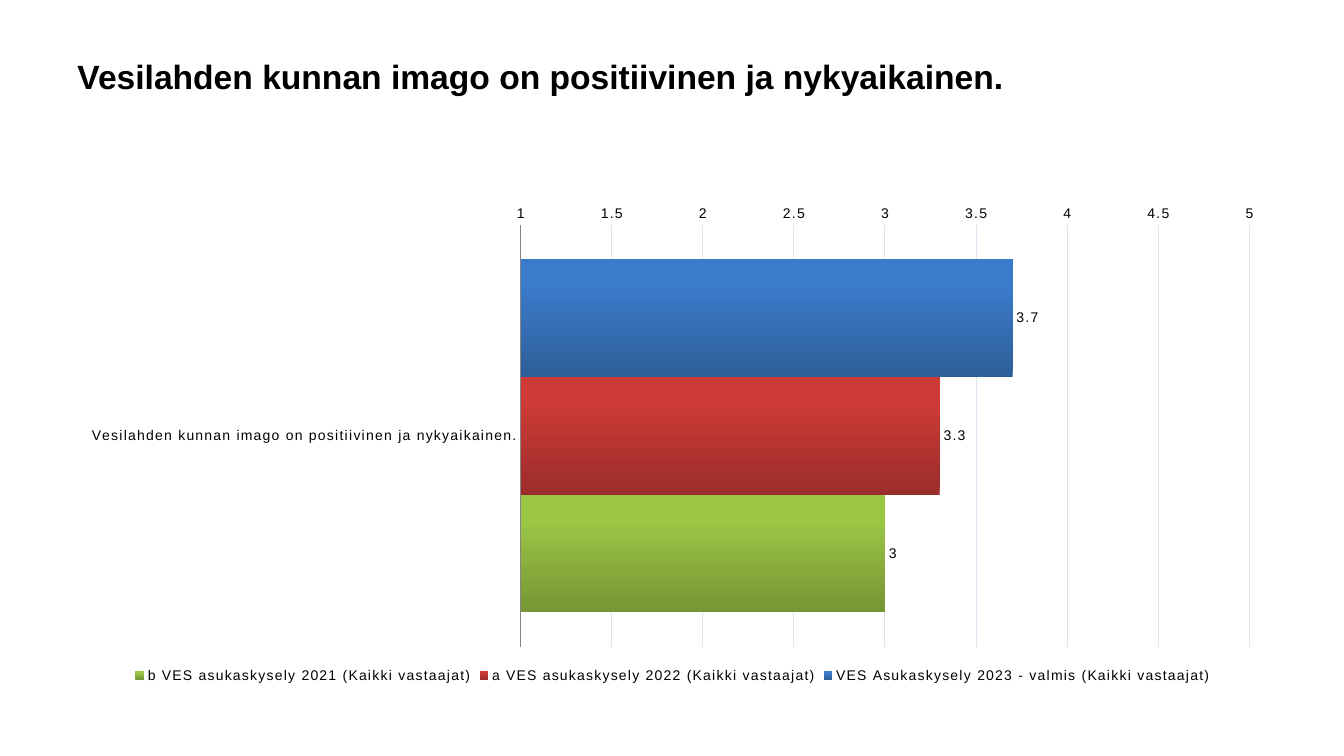
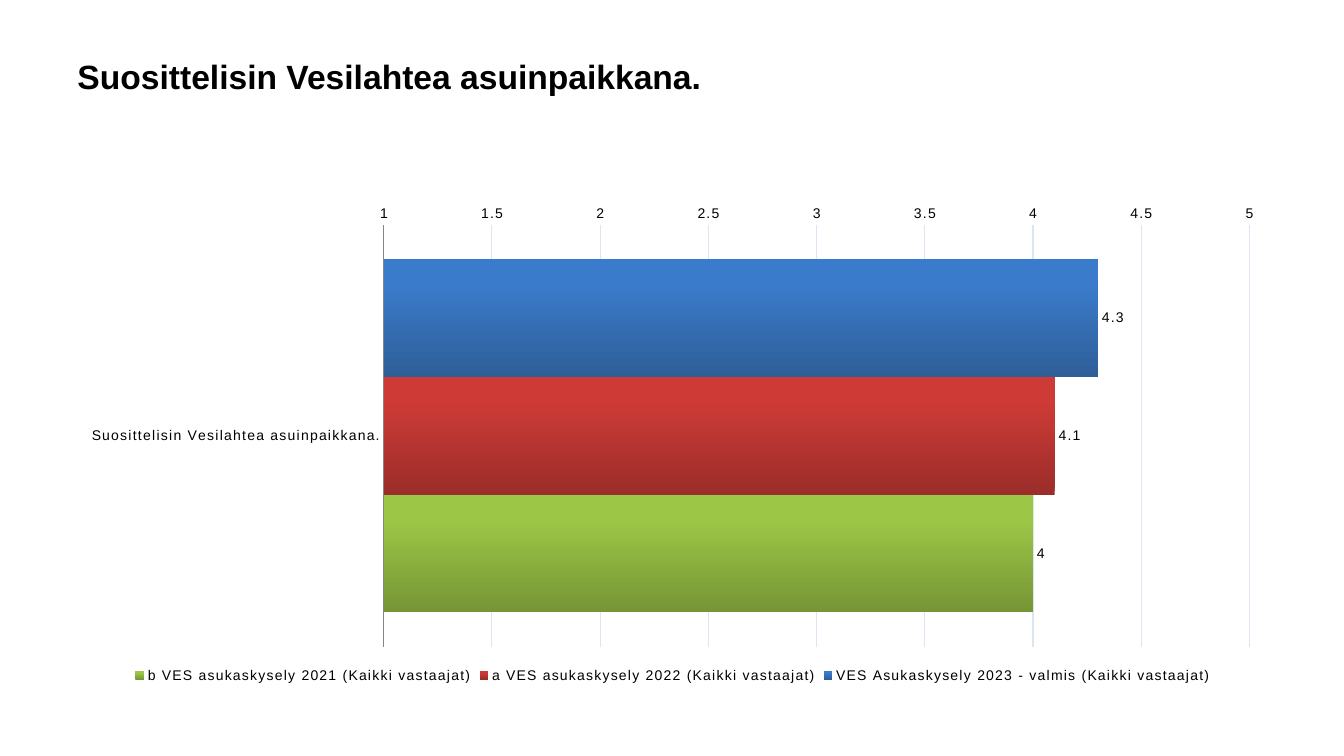
"""Build two survey slides, each with a title and a clustered bar chart."""
from dataclasses import dataclass

from pptx import Presentation
from pptx import util as u
from pptx.chart.data import CategoryChartData
from pptx.dml.color import RGBColor
from pptx.enum import chart as charts, text


@dataclass(frozen=True)
class Theme:
    """Colours, type and spacing shared by the slides."""
    font: str = "Arial"
    ink: str = "000000"
    axis: str = "868686"
    grid: str = "DCE6F2"
    title_size: int = 24
    chart_size: int = 10
    letter_spacing: int = 100
    left: float = 0.67
    width: float = 12


THEME = Theme()

SURVEYS = (
    ("VES Asukaskysely 2023 - valmis (Kaikki vastaajat)", "2E5F99", "3B7BCB"),
    ("a VES asukaskysely 2022 (Kaikki vastaajat)", "9B2D2A", "CE3B37"),
    ("b VES asukaskysely 2021 (Kaikki vastaajat)", "769535", "9CC746"),
)

QUESTIONS = (
    ("Vesilahden kunnan imago on positiivinen ja nykyaikainen.", (3.7, 3.3, 3)),
    ("Suosittelisin Vesilahtea asuinpaikkana.", (4.3, 4.1, 4)),
)


def rgb(value):
    """Return a colour object for a hex value."""
    return RGBColor.from_string(value)


def format_font(font, size, bold=False, color=THEME.ink):
    """Apply the theme typeface with the given size, weight and colour."""
    font.name = THEME.font
    font.size = u.Pt(size)
    font.bold = bold
    font.color.rgb = rgb(color)


def add_text(slide, content, left, top, width, height, size, bold=False,
             anchor=text.MSO_ANCHOR.MIDDLE):
    """Add a wrapped text box with one formatted paragraph."""
    shape = slide.shapes.add_textbox(*map(u.Inches, (left, top, width, height)))
    frame = shape.text_frame
    frame.word_wrap = True
    frame.vertical_anchor = anchor
    run = frame.paragraphs[0].add_run()
    run.text = content
    format_font(run.font, size, bold=bold)


def fill_gradient(fill, bottom, top):
    """Fill with a vertical gradient that is darkest at the bottom."""
    fill.gradient()
    fill.gradient_angle = 90
    for stop, color, position in zip(fill.gradient_stops, (bottom, top), (0, 0.8)):
        stop.color.rgb = rgb(color)
        stop.position = position


def style_axes(chart):
    """Set the scale, lines and order of both axes."""
    category = chart.category_axis
    category.reverse_order = True
    category.crosses = charts.XL_AXIS_CROSSES.MAXIMUM
    category.format.line.color.rgb = rgb(THEME.axis)
    category.format.line.width = u.Pt(0.75)
    value = chart.value_axis
    value.minimum_scale, value.maximum_scale = 1, 5
    value.major_unit = 0.5
    value.format.line.fill.background()
    value.has_major_gridlines = True
    grid = value.major_gridlines.format.line
    grid.color.rgb = rgb(THEME.grid)
    grid.width = u.Pt(0.75)
    value.tick_labels.number_format = "General"
    value.tick_labels.number_format_is_linked = False
    for axis in (category, value):
        axis.major_tick_mark = axis.minor_tick_mark = charts.XL_TICK_MARK.NONE
        format_font(axis.tick_labels.font, THEME.chart_size)


def style_plot(plot):
    """Set bar spacing, bar fills and value labels."""
    plot.gap_width = 58
    plot.overlap = 0
    plot.vary_by_categories = False
    for series, (_, bottom, top) in zip(plot.series, SURVEYS):
        fill_gradient(series.format.fill, bottom, top)
        labels = series.data_labels
        labels.show_value = True
        labels.position = charts.XL_LABEL_POSITION.OUTSIDE_END
        format_font(labels.font, THEME.chart_size)


def style_legend(chart):
    """Place the legend below the plot."""
    chart.has_legend = True
    legend = chart.legend
    legend.position = charts.XL_LEGEND_POSITION.BOTTOM
    legend.include_in_layout = False
    format_font(legend.font, THEME.chart_size)


def space_letters(chart):
    """Widen the letter spacing of all chart text."""
    for properties in chart.element.xpath(".//a:defRPr"):
        properties.set("spc", str(THEME.letter_spacing))


def add_bar_chart(slide, category, values, top, height):
    """Add a bar chart that compares the surveys on one question."""
    data = CategoryChartData(number_format="General")
    data.categories = [category]
    for (name, _, _), value in zip(SURVEYS, values):
        data.add_series(name, [value])
    box = map(u.Inches, (THEME.left, top, THEME.width, height))
    chart = slide.shapes.add_chart(
        charts.XL_CHART_TYPE.BAR_CLUSTERED, *box, data).chart
    chart.has_title = False
    format_font(chart.font, THEME.chart_size)
    style_axes(chart)
    style_plot(chart.plots[0])
    style_legend(chart)
    space_letters(chart)


def add_question_slide(presentation, question, values):
    """Add a slide with a question as its title and a chart of the answers."""
    slide = presentation.slides.add_slide(presentation.slide_layouts[6])
    add_text(slide, question, THEME.left, 0.36, THEME.width, 0.79,
             size=THEME.title_size, bold=True)
    add_bar_chart(slide, question, values, top=1.94, height=4.88)


def main():
    """Build and save the presentation."""
    presentation = Presentation()
    presentation.slide_width = u.Inches(13.33)
    presentation.slide_height = u.Inches(7.5)
    for question, values in QUESTIONS:
        add_question_slide(presentation, question, values)
    presentation.save("out.pptx")


if __name__ == "__main__":
    main()
